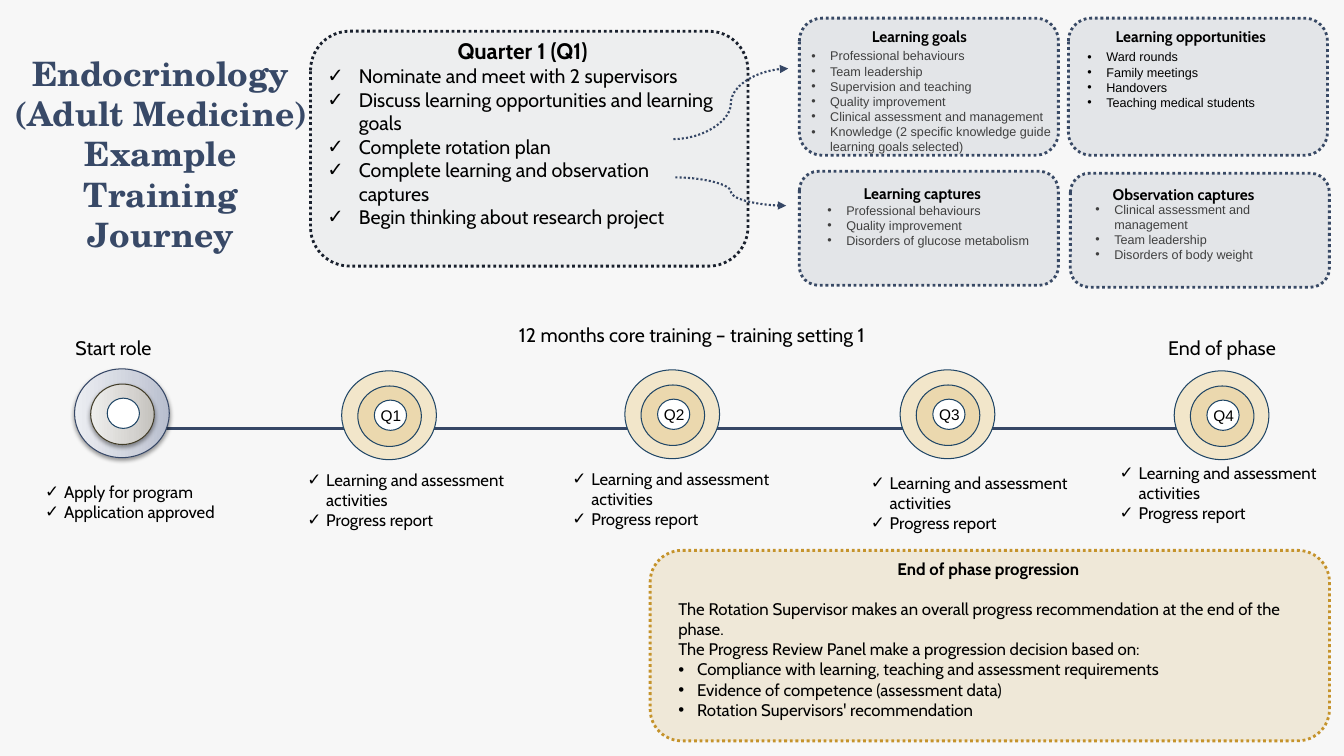
from copy import deepcopy

from lxml import etree
from pptx import Presentation
from pptx.dml.color import RGBColor
from pptx.enum.dml import MSO_LINE
from pptx.enum.shapes import MSO_CONNECTOR, MSO_SHAPE
from pptx.enum.text import MSO_ANCHOR, MSO_AUTO_SIZE, PP_ALIGN
from pptx.oxml.ns import qn
from pptx.util import Pt

OVAL, ROUNDED = MSO_SHAPE.OVAL, MSO_SHAPE.ROUNDED_RECTANGLE
STRAIGHT, CURVE = MSO_CONNECTOR.STRAIGHT, MSO_CONNECTOR.CURVE
DOTTED = MSO_LINE.ROUND_DOT
CENTER, MIDDLE = PP_ALIGN.CENTER, MSO_ANCHOR.MIDDLE
FIXED, GROW = MSO_AUTO_SIZE.NONE, MSO_AUTO_SIZE.SHAPE_TO_FIT_TEXT

NAVY, SLATE, INK, OCEAN, GOLD = "364766", "384965", "19202D", "204666", "C5932B"
BLACK, GREY, WHITE = "000000", "404040", "FFFFFF"
TICK, DOT = "✓", "•"


def paint(color_format, color):
    color_format.rgb = RGBColor.from_string(color)


def add_xml(parent, tag, **attributes):
    return etree.SubElement(parent, qn(tag), {k: str(v) for k, v in attributes.items()})


def write(frame, text, size=12, font="Cabin", color=BLACK, bold=False,
          align=None, bullet=None, indent=13.5, after=0):
    paragraph = frame.paragraphs[0]
    if paragraph.runs:
        paragraph = frame.add_paragraph()
    if align is not None:
        paragraph.alignment = align
    if after:
        paragraph.space_after = Pt(after)
    if bullet:
        properties = paragraph._p.get_or_add_pPr()
        properties.set("marL", str(Pt(indent)))
        properties.set("indent", str(-Pt(indent)))
        add_xml(properties, "a:buFont", typeface="Arial")
        add_xml(properties, "a:buChar", char=bullet)
    run = paragraph.add_run()
    run.text = text
    run.font.size = Pt(size)
    run.font.name = font
    run.font.bold = bold
    paint(run.font.color, color)


class JourneySlide:
    def __init__(self, slide):
        self.slide = slide
        background = slide.background.fill
        background.solid()
        paint(background.fore_color, "F7F7F7")

    def title(self, lines, left, top, width, height):
        title = self.slide.shapes.title
        title.left, title.top, title.width, title.height = map(Pt, (left, top, width, height))
        frame = title.text_frame
        frame.word_wrap, frame.auto_size, frame.vertical_anchor = True, FIXED, MIDDLE
        frame.margin_left = frame.margin_right = Pt(5)
        frame.margin_top = frame.margin_bottom = Pt(2.5)
        for line in lines:
            write(frame, line, size=24, font="TeX Gyre Schola", color="384967",
                  bold=True, align=CENTER)

    def box(self, left, top, width, height, wrap=True):
        frame = self.slide.shapes.add_textbox(*map(Pt, (left, top, width, height))).text_frame
        frame.word_wrap, frame.auto_size = wrap, GROW
        return frame

    def label(self, text, left, top, width, height=20.9, wrap=False, **style):
        write(self.box(left, top, width, height, wrap), text, **style)

    def bullets(self, items, left, top, width, height, **style):
        frame = self.box(left, top, width, height)
        for item in items:
            write(frame, item, **style)

    def shape(self, kind, left, top, width, height, fill, line, weight, alpha=100):
        shape = self.slide.shapes.add_shape(kind, *map(Pt, (left, top, width, height)))
        shape.shadow.inherit = False
        shape.fill.solid()
        paint(shape.fill.fore_color, fill)
        if alpha < 100:
            solid = shape._element.spPr.find(qn("a:solidFill"))
            add_xml(solid[0], "a:alpha", val=alpha * 1000)
        paint(shape.line.color, line)
        shape.line.width = Pt(weight)
        return shape

    def panel(self, left, top, width, height, color=SLATE, line=None, alpha=10):
        panel = self.shape(ROUNDED, left, top, width, height, color, line or color, 2, alpha)
        panel.line.dash_style = DOTTED

    def disc(self, x, y, width, height, fill, line=OCEAN, alpha=100):
        disc = self.shape(OVAL, x - width / 2, y - height / 2, width, height,
                          fill, line, 0.75, alpha)
        disc.rotation = 270
        return disc

    def shaded_disc(self, x, y, width, height, shades, line):
        disc = self.disc(x, y, width, height, shades[0], line)
        disc.fill.gradient()
        disc.fill.gradient_angle = 90
        stops = disc._element.spPr.find(".//" + qn("a:gsLst"))
        stops.insert(1, deepcopy(stops[0]))
        for stop, shade, position in zip(disc.fill.gradient_stops, shades, (0, 0.35, 1)):
            paint(stop.color, shade)
            stop.position = position
        effects = disc._element.spPr.find(qn("a:effectLst"))
        shadow = add_xml(effects, "a:outerShdw", blurRad=Pt(3.1), dist=Pt(1.6),
                         dir=5400000, rotWithShape=0)
        add_xml(add_xml(shadow, "a:srgbClr", val=BLACK), "a:alpha", val=38000)

    def milestone(self, x, y, name=None):
        outer, middle = (x, y, 63.4, 67.7), (x + 0.4, y + 0.7, 43.2, 45.4)
        if name:
            self.disc(*outer, "F2E6CA")
            self.disc(*middle, "D3A440", alpha=20)
        else:
            self.shaded_disc(*outer, ("B8BECE", "CDD1DC", "ECEEF2"), NAVY)
            self.shaded_disc(*middle, ("C3C1BC", "D5D3D0", "EFEFED"), "423D29")
        self.disc(x + 1, y, 21.6, 23, WHITE)
        if name:
            self.label(name, x - 13, y - 10.1, 59.8, wrap=True, size=11, font="Arial")

    def connector(self, kind, start, end, weight, arrow=False):
        connector = self.slide.shapes.add_connector(kind, *map(Pt, start + end))
        paint(connector.line.color, NAVY)
        connector.line.width = Pt(weight)
        if arrow:
            connector.line.dash_style = DOTTED
            add_xml(connector.line._ln, "a:tailEnd", type="triangle")
        add_xml(connector._element.spPr, "a:effectLst")


QUARTERS = [
    ("Q1", (277.9, 296.6), (212.4, 331.9, 157.7)),
    ("Q2", (480.2, 295.9), (401.8, 331.2, 188.6)),
    ("Q3", (676.8, 295.9), (614.9, 334.1, 157.7)),
    ("Q4", (872.6, 296.6), (792.7, 326.9, 167)),
]
DETAILS = [
    ("Learning goals", (571, 13, 185, 97.9), (615.6, 15.8, 87.8), (572.4, 31, 193, 105.1), GREY,
     ["Professional behaviours", "Team leadership", "Supervision and teaching",
      "Quality improvement", "Clinical assessment and management",
      "Knowledge (2 specific knowledge guide learning goals selected)"]),
    ("Learning opportunities", (763.2, 13, 185, 97.9), (789.8, 15.8, 131.8),
     (769.7, 31.7, 164.2, 51.1), BLACK,
     ["Ward rounds", "Family meetings", "Handovers", "Teaching medical students"]),
    ("Learning captures", (571, 122.4, 185, 81.4), (609.8, 128.2, 107.3),
     (583.9, 141.1, 164.2, 51.1), GREY,
     ["Professional behaviours", "Quality improvement", "Disorders of glucose metabolism"]),
    ("Observation captures", (764.6, 123.8, 185, 81.4), (787.7, 128.9, 125.3),
     (775.4, 140.4, 164.2, 51.1), GREY,
     ["Clinical assessment and management", "Team leadership", "Disorders of body weight"]),
]
QUARTER_TASKS = [
    "Nominate and meet with 2 supervisors",
    "Discuss learning opportunities and learning goals",
    "Complete rotation plan",
    "Complete learning and observation captures",
    "Begin thinking about research project",
]


def main():
    deck = Presentation()
    deck.slide_width, deck.slide_height = Pt(960), Pt(540)
    journey = JourneySlide(deck.slides.add_slide(deck.slide_layouts[5]))
    journey.title(["Endocrinology (Adult Medicine)", "Example", "Training Journey"],
                  3.6, 63.4, 222.5, 92.2)

    journey.connector(STRAIGHT, (64.8, 306), (888.5, 306), 2.25)
    journey.milestone(87.1, 295.2)
    for name, center, place in QUARTERS:
        journey.milestone(*center, name)
        journey.bullets(["Learning and assessment activities", "Progress report"],
                        *place, 51.1, bullet=TICK)
    journey.bullets(["Apply for program", "Application approved"],
                    25.2, 340.6, 155.5, 36, bullet=TICK)
    journey.label("Start role", 46.8, 236.2, 69.8, 24.5, size=14)
    journey.label("End of phase", 827.3, 236.2, 97.2, 24.5, size=14)
    journey.label("12 months core training – training setting 1",
                  363.6, 226.8, 270.7, 24.5, size=14)

    journey.panel(221.8, 22.3, 312.5, 167.8, line=INK, alpha=5)
    tasks = journey.box(226.8, 23, 293, 159.8)
    write(tasks, "Quarter 1 (Q1)", size=16, bold=True, align=CENTER)
    for task in QUARTER_TASKS:
        write(tasks, task, size=14, bullet=TICK, indent=22.5)

    for heading, frame, heading_place, list_place, color, items in DETAILS:
        journey.panel(*frame)
        journey.label(heading, *heading_place, size=11, bold=True)
        journey.bullets(items, *list_place, size=9, font="Arial", color=color, bullet=DOT)
    journey.connector(CURVE, (481, 99.4), (563, 49), 1.5, arrow=True)
    journey.connector(CURVE, (482.4, 126.7), (561.6, 146.9), 1.5, arrow=True)

    journey.panel(464.4, 393.1, 485.3, 136.1, color=GOLD, alpha=15)
    progression = journey.box(477.4, 395.3, 457.2, 123.8)
    write(progression, "End of phase progression", bold=True, align=CENTER, after=14.4)
    write(progression, "The Rotation Supervisor makes an overall progress recommendation "
                       "at the end of the phase.")
    write(progression, "The Progress Review Panel make a progression decision based on:")
    for basis in ("Compliance with learning, teaching and assessment requirements",
                  "Evidence of competence (assessment data)",
                  "Rotation Supervisors' recommendation"):
        write(progression, basis, bullet=DOT)

    deck.save("out.pptx")


if __name__ == "__main__":
    main()
